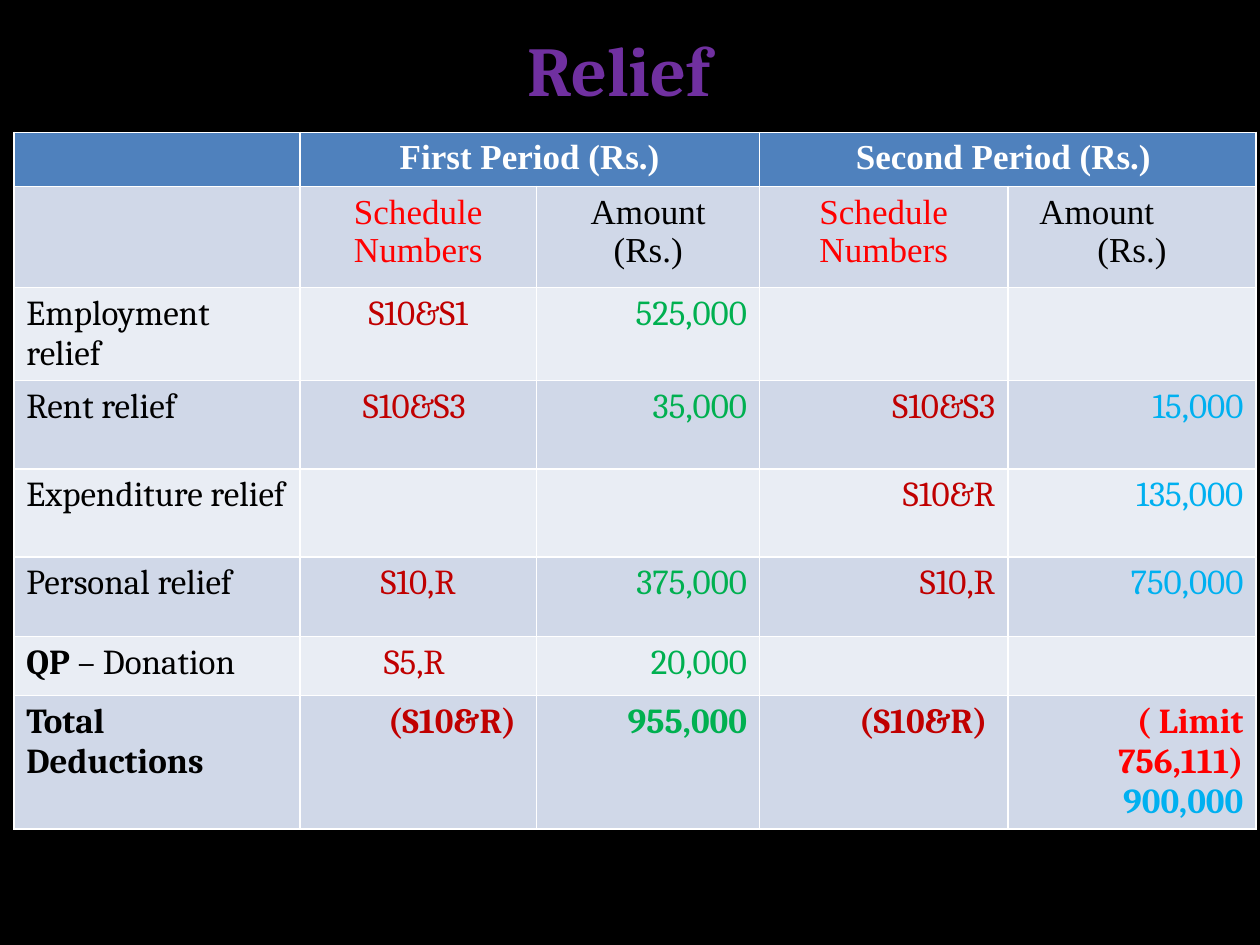
"""Build the Relief slide: a title over a table of deductions for two periods."""
from pptx import Presentation
from pptx.dml.color import RGBColor
from pptx.enum.text import MSO_ANCHOR, PP_ALIGN
from pptx.util import Inches, Pt

ROMAN = "Times New Roman"
LEFT, MID, RIGHT = PP_ALIGN.LEFT, PP_ALIGN.CENTER, PP_ALIGN.RIGHT


def tone(code):
    return RGBColor.from_string(code)


def write(frame, text, tint="000000", font="Cambria", size=20, bold=False, align=LEFT, join=False):
    para = frame.paragraphs[-1]
    if para.runs and not join:
        para = frame.add_paragraph()
    para.alignment = align
    run = para.add_run()
    run.text = text
    run.font.name, run.font.size, run.font.bold = font, Pt(size), bold
    run.font.color.rgb = tone(tint)
    return para


deck = Presentation()
deck.slide_width, deck.slide_height = Inches(10), Inches(7.5)
wide, high = deck.slide_width, deck.slide_height
slide = deck.slides.add_slide(deck.slide_layouts[6])
slide.background.fill.solid()
slide.background.fill.fore_color.rgb = tone("000000")

cols = [2.27, 1.88, 1.77, 1.97, 1.97]
rows = [0.43, 0.8, 0.74, 0.7, 0.7, 0.63, 0.47, 1.05]
grid = slide.shapes.add_table(
    len(rows), len(cols), Inches(0.11), Inches(1.05), Inches(sum(cols)), Inches(sum(rows))
).table
for col, span in zip(grid.columns, cols):
    col.width = Inches(span)
for row, span in zip(grid.rows, rows):
    row.height = Inches(span)
for r in range(len(rows)):
    for c in range(len(cols)):
        fill = grid.cell(r, c).fill
        fill.solid()
        fill.fore_color.rgb = tone("4F81BD" if r == 0 else ("E9EDF4", "D0D8E8")[r % 2])

for c, name in ((1, "First Period (Rs.)"), (3, "Second Period (Rs.) ")):
    head = grid.cell(0, c)
    head.merge(grid.cell(0, c + 1))
    write(head.text_frame, name, tint="FFFFFF", font=ROMAN, bold=True, align=MID)
    write(grid.cell(1, c).text_frame, "Schedule Numbers", tint="FF0000", font=ROMAN, align=MID)
    frame = grid.cell(1, c + 1).text_frame
    para = write(frame, "Amount", font=ROMAN, align=MID if c == 1 else LEFT)
    if c == 3:
        para._p.get_or_add_pPr().set("marL", str(Inches(0.15)))
    write(frame, "(Rs.)", font=ROMAN, align=MID)

data = [
    ["Employment relief", "S10&S1", "525,000", "", ""],
    ["Rent relief", "S10&S3 ", "35,000", "S10&S3", "15,000"],
    ["Expenditure relief", "", "", "S10&R", "135,000"],
    ["Personal relief", "S10,R", "375,000", "S10,R", "750,000"],
    ["QP", "S5,R ", "20,000", "", ""],
    ["Total Deductions", "(S10&R) ", "955,000", "(S10&R) ", "( Limit 756,111)"],
]
tints = ["000000", "C00000", "00B050", "C00000", "00B0F0"]
sides = [LEFT, MID, RIGHT, RIGHT, RIGHT]
for r, line in enumerate(data, 2):
    last = line is data[-1]
    for c, text in enumerate(line):
        if text:
            write(
                grid.cell(r, c).text_frame,
                text,
                tint="FF0000" if last and c == 4 else tints[c],
                bold=last or text == "QP",
                align=RIGHT if last and c == 1 else sides[c],
            )
write(grid.cell(6, 0).text_frame, " – Donation", join=True)
write(grid.cell(7, 4).text_frame, "900,000", tint=tints[4], bold=True, align=RIGHT)

box = slide.shapes.add_textbox(
    int(wide * 0.047), int(high * 0.021), int(wide * 0.888), int(high * 0.103)
)
frame = box.text_frame
frame.word_wrap = True
frame.vertical_anchor = MSO_ANCHOR.MIDDLE
write(frame, "Relief", tint="7030A0", size=40, bold=True, align=MID)

deck.save("out.pptx")
